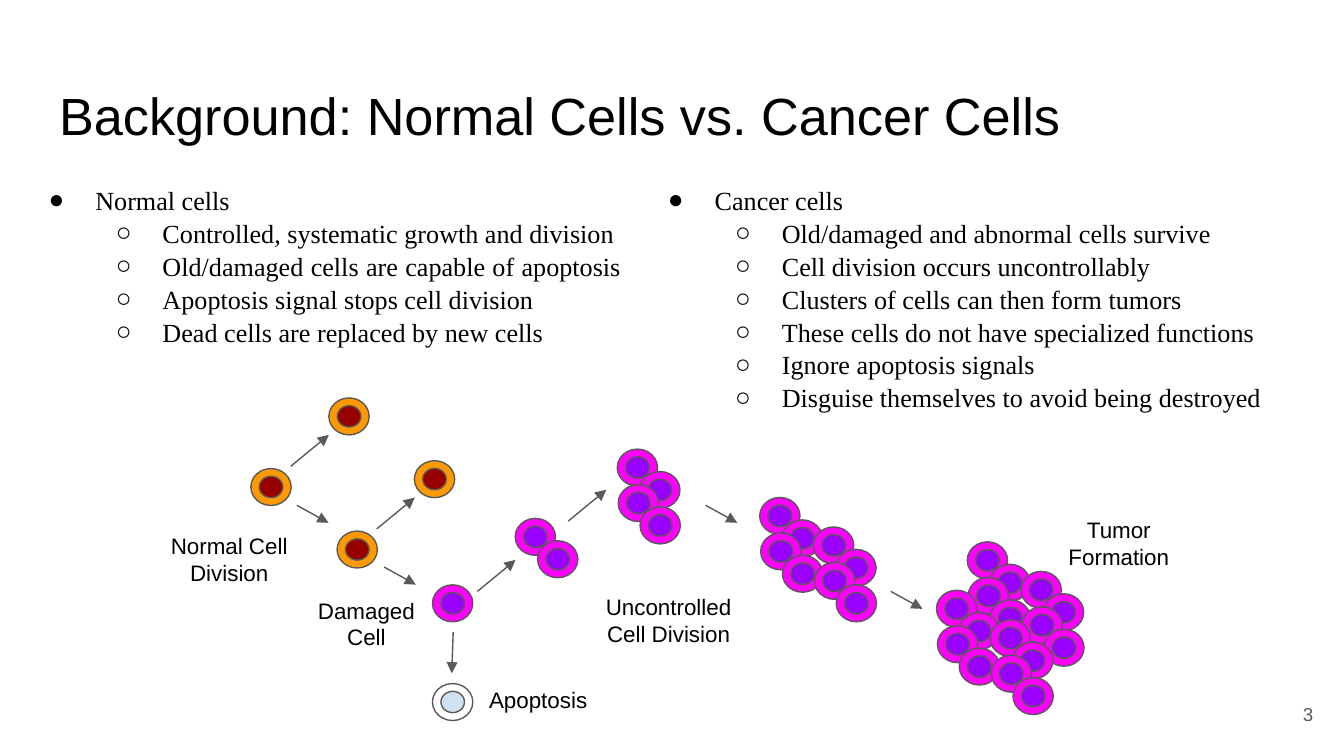
import dataclasses

import lxml.etree
import pptx
import pptx.dml.color
import pptx.enum.shapes
import pptx.enum.text
import pptx.oxml.ns
import pptx.util

Pt = pptx.util.Pt
ALIGN = pptx.enum.text.PP_ALIGN
ANCHOR = pptx.enum.text.MSO_ANCHOR
qn = pptx.oxml.ns.qn


@dataclasses.dataclass(frozen=True)
class Theme:
    sans: str = "Arial"
    serif: str = "Times New Roman"
    title_size: float = 28
    body_size: float = 14
    label_size: float = 12
    number_size: float = 10
    text: str = "000000"
    muted: str = "595959"
    outline: float = 0.75
    normal: tuple = ("FF9900", "980000")
    damaged: tuple = ("FF00FF", "9900FF")
    dead: tuple = ("FFFFFF", "CFE2F3")


class CellSlide:
    def __init__(self, slide, theme):
        self.slide = slide
        self.theme = theme

    def color(self, value):
        return pptx.dml.color.RGBColor.from_string(value)

    def frame(self, box, anchor=ANCHOR.TOP):
        frame = box.text_frame
        frame.word_wrap = True
        frame.auto_size = pptx.enum.text.MSO_AUTO_SIZE.NONE
        frame.vertical_anchor = anchor
        frame.margin_left = frame.margin_right = Pt(7.2)
        frame.margin_top = frame.margin_bottom = Pt(7.2)
        return frame

    def textbox(self, left, top, width, height):
        return self.slide.shapes.add_textbox(Pt(left), Pt(top), Pt(width), Pt(height))

    def run(self, paragraph, text, size, font, color):
        run = paragraph.add_run()
        run.text = text
        run.font.size = Pt(size)
        run.font.name = font
        run.font.color.rgb = self.color(color)

    def title(self, text, left, top, width, height):
        heading = self.slide.shapes.title
        heading.left, heading.top = Pt(left), Pt(top)
        heading.width, heading.height = Pt(width), Pt(height)
        paragraph = self.frame(heading).paragraphs[0]
        paragraph.alignment = ALIGN.LEFT
        paragraph.line_spacing = 1.07
        self.run(paragraph, text, self.theme.title_size, self.theme.sans, self.theme.text)

    def label(self, text, left, top, width=90, height=47.5, align=ALIGN.CENTER):
        paragraph = self.frame(self.textbox(left, top, width, height)).paragraphs[0]
        paragraph.alignment = align
        self.run(paragraph, text, self.theme.label_size, self.theme.sans, self.theme.text)

    def number(self, text, left, top, width, height):
        box = self.textbox(left, top, width, height)
        paragraph = self.frame(box, ANCHOR.MIDDLE).paragraphs[0]
        paragraph.alignment = ALIGN.RIGHT
        self.run(paragraph, text, self.theme.number_size, self.theme.sans, self.theme.muted)

    def bullet(self, paragraph, level):
        paragraph.level = level
        properties = paragraph._p.get_or_add_pPr()
        properties.set("marL", str(Pt(36 * (level + 1))))
        properties.set("indent", str(Pt(-25)))
        tint = lxml.etree.SubElement(properties, qn("a:buClr"))
        lxml.etree.SubElement(tint, qn("a:srgbClr"), val=self.theme.text)
        lxml.etree.SubElement(properties, qn("a:buFont"), typeface=self.theme.serif)
        lxml.etree.SubElement(properties, qn("a:buChar"), char="●○"[level])

    def traits(self, heading, points, left, top, width, height):
        frame = self.frame(self.textbox(left, top, width, height))
        for index, text in enumerate([heading, *points]):
            paragraph = frame.add_paragraph() if index else frame.paragraphs[0]
            paragraph.alignment = ALIGN.JUSTIFY
            paragraph.line_spacing = 1.05
            self.bullet(paragraph, min(index, 1))
            self.run(paragraph, text, self.theme.body_size, self.theme.serif, self.theme.text)

    def oval(self, left, top, width, height, fill):
        oval = self.slide.shapes.add_shape(
            pptx.enum.shapes.MSO_SHAPE.OVAL, Pt(left), Pt(top), Pt(width), Pt(height))
        oval.shadow.inherit = False
        oval.fill.solid()
        oval.fill.fore_color.rgb = self.color(fill)
        oval.line.color.rgb = self.color(self.theme.muted)
        oval.line.width = Pt(self.theme.outline)

    def cell(self, left, top, colors):
        membrane, nucleus = colors
        self.oval(left, top, 21.6, 19.8, membrane)
        self.oval(left + 4.5, top + 4.2, 12.6, 11.4, nucleus)

    def cluster(self, left, top, count=4):
        for dx, dy in [(0, 0), (12, 12), (0.5, 19), (12.2, 31)][:count]:
            self.cell(left + dx, top + dy, self.theme.damaged)

    def strand(self, left, top):
        self.cluster(left, top)
        self.cluster(left + 28.8, top + 15.8)

    def arrow(self, x1, y1, x2, y2):
        arrow = self.slide.shapes.add_connector(
            pptx.enum.shapes.MSO_CONNECTOR.STRAIGHT, Pt(x1), Pt(y1), Pt(x2), Pt(y2))
        arrow.line.color.rgb = self.color(self.theme.muted)
        arrow.line.width = Pt(self.theme.outline)
        lxml.etree.SubElement(arrow.line._get_or_add_ln(), qn("a:tailEnd"), type="triangle")
        lxml.etree.SubElement(arrow._element.spPr, qn("a:effectLst"))


def main():
    deck = pptx.Presentation()
    deck.slide_width, deck.slide_height = Pt(720), Pt(405)
    theme = Theme()
    page = CellSlide(deck.slides.add_slide(deck.slide_layouts[5]), theme)

    page.title("Background: Normal Cells vs. Cancer Cells", 24.5, 35.3, 671, 45.4)
    page.traits("Normal cells ", [
        "Controlled, systematic growth and division ",
        "Old/damaged cells are capable of apoptosis ",
        "Apoptosis signal stops cell division ",
        "Dead cells are replaced by new cells ",
    ], 8, 90.7, 332, 131)
    page.traits("Cancer cells", [
        "Old/damaged and abnormal cells survive",
        "Cell division occurs uncontrollably",
        "Clusters of cells can then form tumors",
        "These cells do not have specialized functions ",
        "Ignore apoptosis signals",
        "Disguise themselves to avoid being destroyed",
    ], 339.8, 90.7, 371, 133)

    for left, top in [(134.4, 251), (176.2, 213.2), (180.6, 284.5), (222, 246.8)]:
        page.cell(left, top, theme.normal)
    page.cell(231.7, 313.3, theme.damaged)
    page.cell(231.7, 366.2, theme.dead)
    page.cluster(276, 277.7, count=2)
    page.cluster(330.7, 240.6)
    page.strand(407, 266.5)
    page.strand(518.2, 290.3)
    page.strand(501.7, 316.2)

    for left, top in [(155.8, 233), (201.8, 266.6), (255.8, 300), (304.4, 262.4)]:
        page.arrow(left, top + 16.8, left + 20.4, top)
    for left, top in [(159, 270.7), (205.8, 303.8), (378, 270.7), (477.2, 316.8)]:
        page.arrow(left, top, left + 17, top + 9.4)
    page.arrow(242.8, 338.6, 242, 360.7)

    page.label("Normal Cell Division", 77.8, 278)
    page.label("Damaged Cell", 151.3, 312.5)
    page.label("Uncontrolled Cell Division", 313.2, 310.5)
    page.label("Tumor Formation", 554.4, 269.3)
    page.label("Apoptosis", 254.9, 360.5, height=22.3, align=ALIGN.LEFT)
    page.number("3", 667.4, 367.2, 43.2, 31)
    deck.save("out.pptx")


if __name__ == "__main__":
    main()
